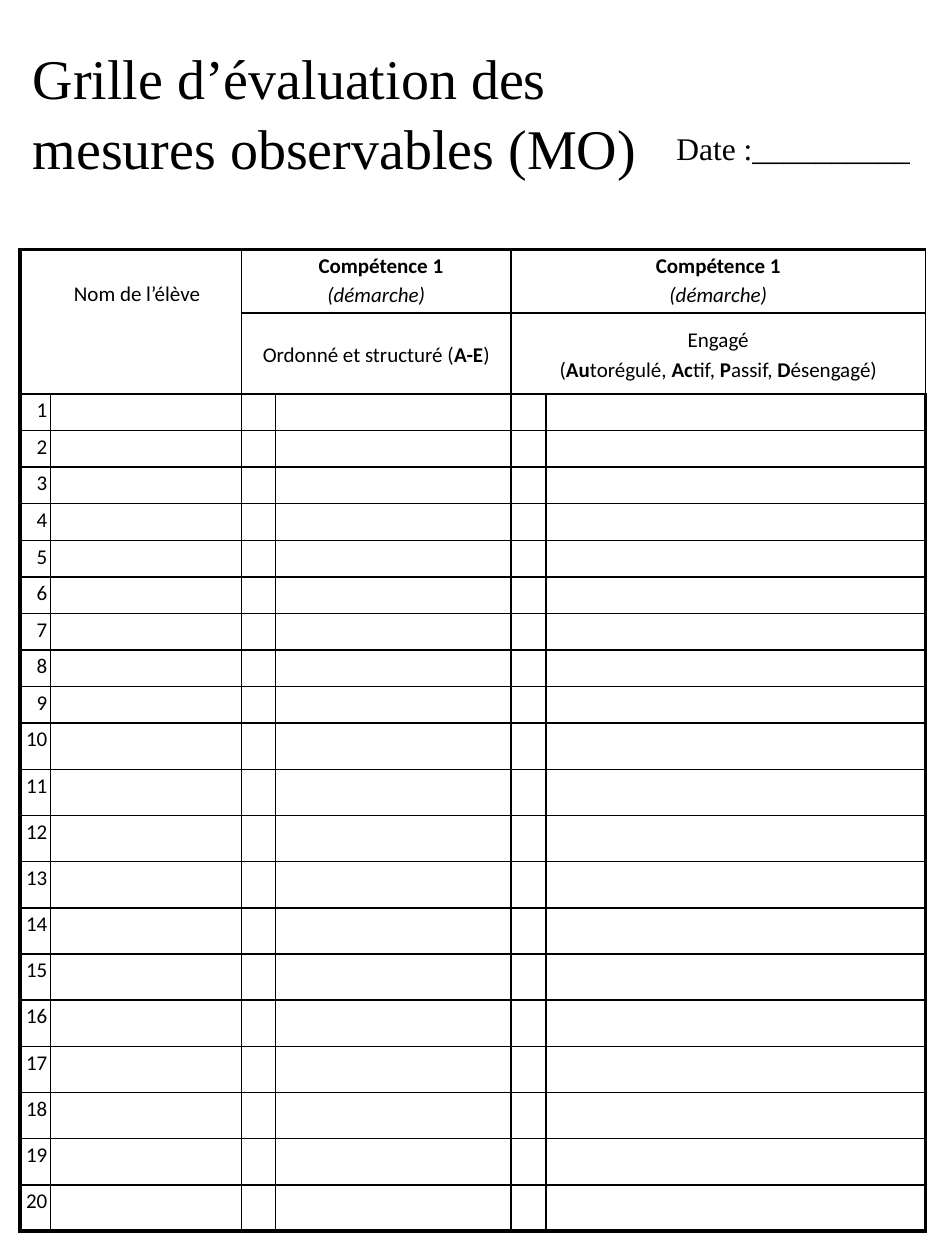
import dataclasses

import pptx
import pptx.dml.color
import pptx.enum.shapes
import pptx.enum.text
import pptx.oxml
import pptx.oxml.ns
import pptx.util

Pt = pptx.util.Pt
ALIGN = pptx.enum.text.PP_ALIGN
ANCHOR = pptx.enum.text.MSO_ANCHOR


@dataclasses.dataclass(frozen=True)
class Theme:
    ink: str = "000000"
    paper: str = "FFFFFF"
    heading_font: str = "Times New Roman"
    body_font: str = "Calibri"
    title_size: float = 32
    date_size: float = 18
    body_size: float = 12
    body_spacing: float = 1.15
    title_spacing: float = 1.04
    outer_line: float = 2.25
    inner_line: float = 1


class GridPage:
    def __init__(self, deck, theme):
        self.theme = theme
        self.page = deck.slides.add_slide(deck.slide_layouts[5])

    def color(self, value):
        return pptx.dml.color.RGBColor.from_string(value)

    def format_span(self, span, font, size, style=""):
        span.font.name = font
        span.font.size = Pt(size)
        span.font.bold = style == "bold"
        span.font.italic = style == "italic"
        span.font.color.rgb = self.color(self.theme.ink)

    def backdrop(self, width, height):
        shape = self.page.shapes.add_shape(
            pptx.enum.shapes.MSO_SHAPE.RECTANGLE, 0, 0, width, height)
        shape.shadow.inherit = False
        shape.fill.solid()
        shape.fill.fore_color.rgb = self.color(self.theme.paper)
        shape.line.color.rgb = self.color(self.theme.paper)
        shape.line.width = Pt(1)
        self.page.shapes.element.insert(2, shape.element)

    def heading(self, box, text, size, wrap, spacing=1.0):
        frame = box.text_frame
        frame.text = text
        frame.word_wrap = wrap
        frame.auto_size = pptx.enum.text.MSO_AUTO_SIZE.SHAPE_TO_FIT_TEXT
        frame.vertical_anchor = ANCHOR.TOP
        for para in frame.paragraphs:
            para.alignment = ALIGN.LEFT
            para.line_spacing = spacing
            for span in para.runs:
                self.format_span(span, self.theme.heading_font, size)

    def title(self, text, left, top, width, height):
        box = self.page.shapes.title
        box.left, box.top, box.width, box.height = map(Pt, (left, top, width, height))
        self.heading(box, text, self.theme.title_size, True, self.theme.title_spacing)

    def label(self, text, left, top, width, height):
        box = self.page.shapes.add_textbox(*map(Pt, (left, top, width, height)))
        self.heading(box, text, self.theme.date_size, False)

    def table(self, left, top, widths, heights):
        frame = self.page.shapes.add_table(
            len(heights), len(widths), Pt(left), Pt(top), Pt(sum(widths)), Pt(sum(heights)))
        table = frame.table
        table.first_row = False
        table.horz_banding = False
        for column, width in zip(table.columns, widths):
            column.width = Pt(width)
        for row, height in zip(table.rows, heights):
            row.height = Pt(height)
        last_row, last_column = len(heights) - 1, len(widths) - 1
        for r in range(len(heights)):
            for c in range(len(widths)):
                edges = (("L", c == 0), ("R", c == last_column),
                         ("T", r == 0), ("B", r == last_row))
                self.blank_cell(table.cell(r, c), edges)
        return table

    def blank_cell(self, cell, edges):
        cell.margin_left = cell.margin_right = Pt(2)
        cell.margin_top = cell.margin_bottom = 0
        cell.fill.background()
        properties = cell._tc.get_or_add_tcPr()
        for position, (side, outer) in enumerate(edges):
            width = Pt(self.theme.outer_line if outer else self.theme.inner_line)
            properties.insert(position, pptx.oxml.parse_xml(
                f'<a:ln{side} {pptx.oxml.ns.nsdecls("a")} w="{int(width)}">'
                f'<a:solidFill><a:srgbClr val="{self.theme.ink}"/></a:solidFill>'
                f'</a:ln{side}>'))
        para = cell.text_frame.paragraphs[0]
        para._p.append(pptx.oxml.parse_xml(
            f'<a:endParaRPr {pptx.oxml.ns.nsdecls("a")} sz="{self.theme.body_size * 100}"/>'))

    def fill_cell(self, cell, lines, align=ALIGN.CENTER, anchor=ANCHOR.TOP, indent=0):
        cell.vertical_anchor = anchor
        frame = cell.text_frame
        for number, line in enumerate(lines):
            para = frame.add_paragraph() if number else frame.paragraphs[0]
            para.alignment = align
            para.line_spacing = self.theme.body_spacing
            if indent and number == 0:
                para._p.get_or_add_pPr().set("indent", str(int(Pt(indent))))
            for text, style in line:
                span = para.add_run()
                span.text = text
                self.format_span(span, self.theme.body_font, self.theme.body_size, style)


def main():
    deck = pptx.Presentation()
    deck.slide_width, deck.slide_height = Pt(540), Pt(720)
    grid = GridPage(deck, Theme())
    grid.backdrop(deck.slide_width, deck.slide_height)
    grid.title("Grille d’évaluation des\nmesures observables (MO)", 11.5, 19.5, 401, 85)

    widths = [17.5, 109, 19.5, 134.5, 20, 217]
    heights = [36.5, 46.2] + [20.9] * 9 + [26.4] * 11
    table = grid.table(11.5, 142.5, widths, heights)
    table.cell(0, 0).merge(table.cell(1, 1))
    for row in (0, 1):
        for column in (2, 4):
            table.cell(row, column).merge(table.cell(row, column + 1))

    name_cell = table.cell(0, 0)
    name_cell.margin_top = Pt(16)
    grid.fill_cell(name_cell, [[("Nom de l’élève", "")]], indent=7.2)
    skill = [[("Compétence 1", "bold")], [("(démarche)", "italic")]]
    grid.fill_cell(table.cell(0, 2), skill, indent=5.4)
    grid.fill_cell(table.cell(0, 4), skill)
    grid.fill_cell(
        table.cell(1, 2),
        [[("Ordonné et structuré (", ""), ("A-E", "bold"), (")", "")]],
        anchor=ANCHOR.MIDDLE)
    grid.fill_cell(
        table.cell(1, 4),
        [[("Engagé", "")],
         [("(", ""), ("Au", "bold"), ("torégulé, ", ""), ("Ac", "bold"), ("tif,", ""),
          (" P", "bold"), ("assif,", ""), (" D", "bold"), ("ésengagé)", "")]],
        anchor=ANCHOR.MIDDLE)
    for number in range(1, 21):
        grid.fill_cell(table.cell(number + 1, 0), [[(str(number), "")]], align=ALIGN.RIGHT)

    grid.label("Date :__________", 379.5, 70, 149, 29)
    deck.save("out.pptx")


if __name__ == "__main__":
    main()
